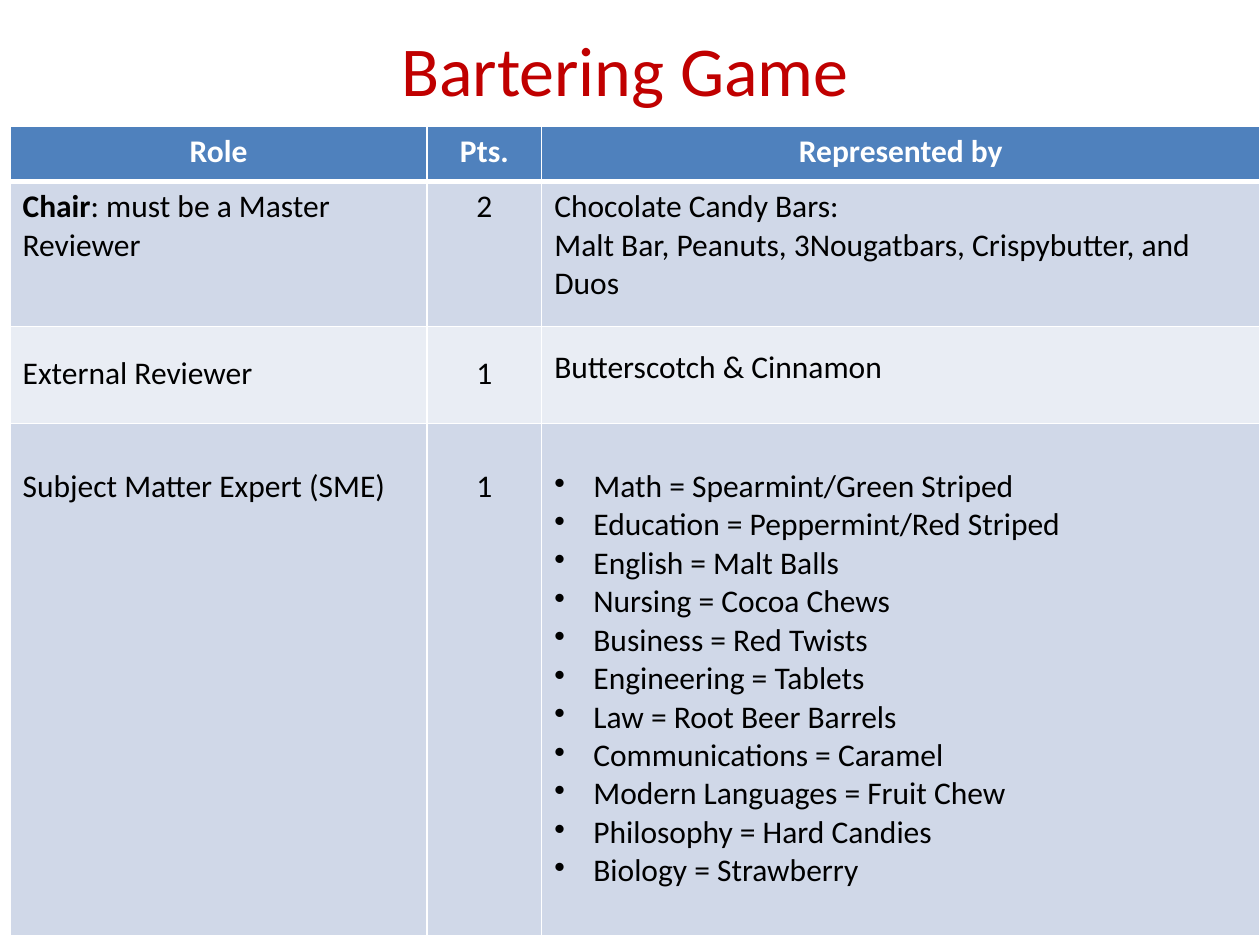
from lxml.etree import SubElement
from pptx import Presentation
from pptx.dml.color import RGBColor
from pptx.enum.text import MSO_ANCHOR, PP_ALIGN
from pptx.oxml import parse_xml
from pptx.oxml.ns import nsdecls, qn
from pptx.util import Inches, Pt

COLORS = {"title": "C00000", "header": "4F81BD", "dark_band": "D0D8E8",
          "light_band": "E9EDF4", "border": "FFFFFF", "header_text": "FFFFFF",
          "body_text": "000000"}
FONT = "Calibri"


def style_paragraph(paragraph, size, color, align):
    paragraph.alignment = align
    paragraph.font.name = FONT
    paragraph.font.size = Pt(size)
    paragraph.font.color.rgb = RGBColor.from_string(COLORS[color])


def set_borders(cell, top, bottom):
    widths = {"lnL": 1, "lnR": 1, "lnT": top, "lnB": bottom}
    for position, (side, width) in enumerate(widths.items()):
        line = parse_xml(f'<a:{side} {nsdecls("a")} w="{Pt(width)}"><a:solidFill>'
                         f'<a:srgbClr val="{COLORS["border"]}"/></a:solidFill></a:{side}>')
        cell._tc.get_or_add_tcPr().insert(position, line)


subjects = [
    ("Math", "Spearmint/Green Striped"),
    ("Education", "Peppermint/Red Striped"),
    ("English", "Malt Balls"),
    ("Nursing", "Cocoa Chews"),
    ("Business", "Red Twists"),
    ("Engineering", "Tablets"),
    ("Law", "Root Beer Barrels"),
    ("Communications", "Caramel"),
    ("Modern Languages", "Fruit Chew"),
    ("Philosophy", "Hard Candies"),
    ("Biology", "Strawberry"),
]
rows = [
    [["Role"], ["Pts."], ["Represented by"]],
    [["Chair: must be a Master Reviewer"], ["2"],
     ["Chocolate Candy Bars:",
      "Malt Bar, Peanuts, 3Nougatbars, Crispybutter, and Duos"]],
    [["External Reviewer"], ["1"], ["Butterscotch & Cinnamon"]],
    [["Subject Matter Expert (SME)"], ["1"],
     [f"{subject} = {candy}" for subject, candy in subjects]],
]
column_widths = [3.31, 0.91, 5.7]
row_heights = [0.44, 1.15, 0.77, 4.07]
top_margins = [[0.05] * 3, [0.05] * 3, [0.22, 0.22, 0.18], [0.35] * 3]
row_fills = ["header", "dark_band", "light_band", "dark_band"]

prs = Presentation()
prs.slide_width, prs.slide_height = Inches(10), Inches(7.5)
slide = prs.slides.add_slide(prs.slide_layouts[5])

title = slide.shapes.title
title.left, title.top = Inches(0.17), Inches(0.08)
title.width, title.height = Inches(9.58), Inches(0.92)
title.text_frame.text = "Bartering Game"
title.text_frame.vertical_anchor = MSO_ANCHOR.MIDDLE
style_paragraph(title.text_frame.paragraphs[0], 40, "title", PP_ALIGN.CENTER)

roles = slide.shapes.add_table(
    len(rows), len(column_widths), Inches(0.08), Inches(1),
    Inches(sum(column_widths)), Inches(sum(row_heights))).table
for column, width in zip(roles.columns, column_widths):
    column.width = Inches(width)

for r, row in enumerate(rows):
    roles.rows[r].height = Inches(row_heights[r])
    for c, lines in enumerate(row):
        cell = roles.cell(r, c)
        cell.fill.solid()
        cell.fill.fore_color.rgb = RGBColor.from_string(COLORS[row_fills[r]])
        set_borders(cell, 3 if r == 1 else 1, 3 if r == 0 else 1)
        cell.margin_top = Inches(top_margins[r][c])
        cell.text_frame.text = "\n".join(lines)
        for paragraph in cell.text_frame.paragraphs:
            centered = r == 0 or c == 1
            style_paragraph(paragraph, 18, "header_text" if r == 0 else "body_text",
                            PP_ALIGN.CENTER if centered else PP_ALIGN.LEFT)
            paragraph.font.bold = r == 0

chair = roles.cell(1, 0).text_frame.paragraphs[0]
chair.runs[0].text = "Chair"
chair.runs[0].font.bold = True
chair.add_run().text = ": must be a Master Reviewer"

for paragraph in roles.cell(3, 2).text_frame.paragraphs:
    properties = paragraph._p.get_or_add_pPr()
    properties.set("marL", str(Inches(0.31)))
    properties.set("indent", str(-Inches(0.31)))
    bullet = SubElement(properties, qn("a:buChar"), char="•")
    properties.insert(0, bullet)

prs.save("out.pptx")
